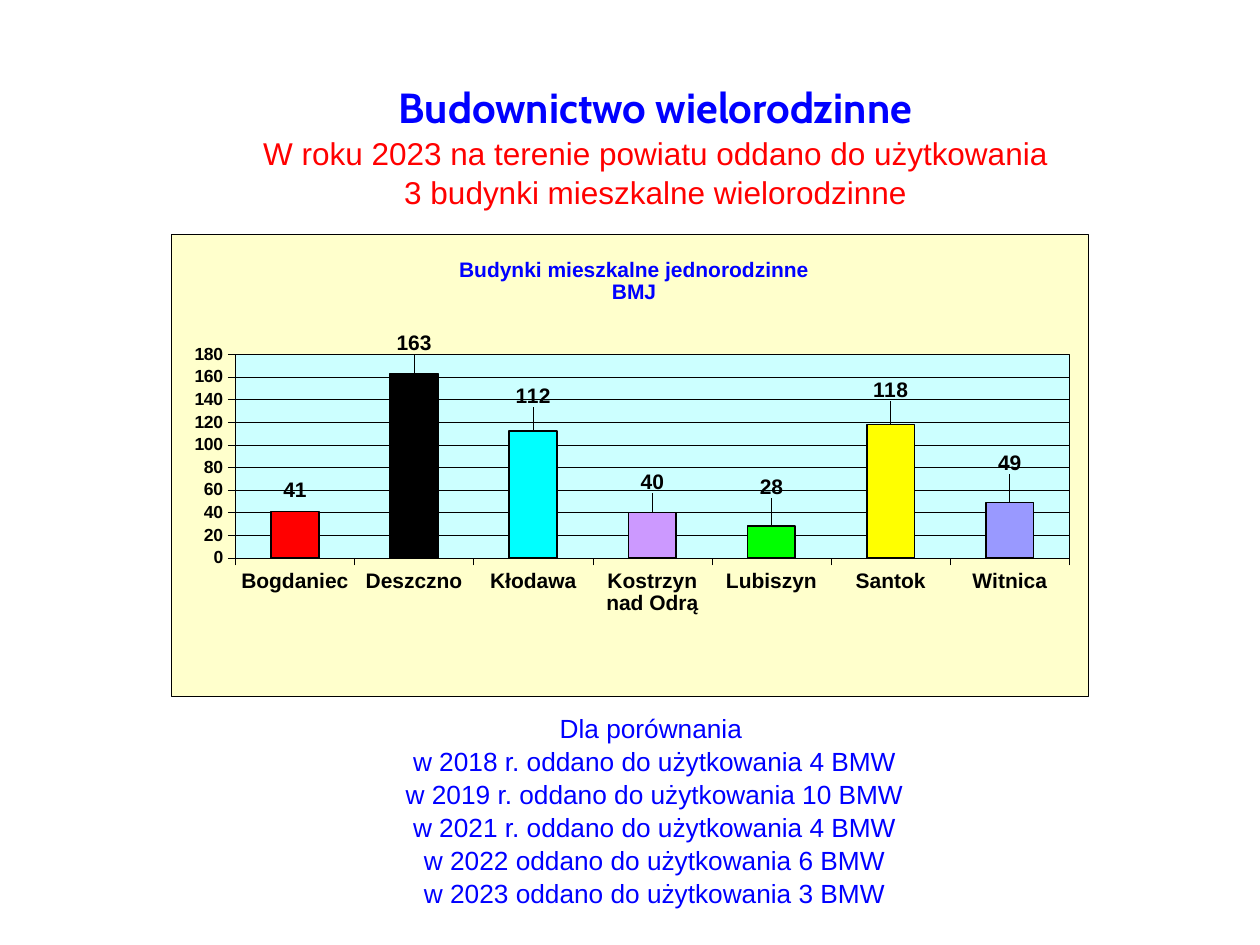
"""Build the slide on multi-family housing with its chart by commune."""
from pptx import Presentation, util as u
from pptx.chart.data import CategoryChartData
from pptx.dml.color import RGBColor
from pptx.enum import chart as kinds, text
from pptx.oxml import parse_xml
from pptx.oxml.ns import nsdecls, qn

SCALE = 914400 / 126
BLUE = RGBColor(0, 0, 255)
RED = RGBColor(255, 0, 0)
BLACK = RGBColor(0, 0, 0)
CREAM = RGBColor(255, 255, 204)
PALE = RGBColor(204, 255, 255)
CYAN = RGBColor(0, 255, 255)
LILAC = RGBColor(204, 153, 255)
GREEN = RGBColor(0, 255, 0)
GOLD = RGBColor(255, 255, 0)
MAUVE = RGBColor(153, 153, 255)

BARS = [
    ("Bogdaniec", 41, RED, -3),
    ("Deszczno", 163, BLACK, -12),
    ("Kłodawa", 112, CYAN, -19),
    ("Kostrzyn nad Odrą", 40, LILAC, -13),
    ("Lubiszyn", 28, GREEN, -21),
    ("Santok", 118, GOLD, -18),
    ("Witnica", 49, MAUVE, -23),
]
PAST = [
    "Dla porównania ",
    "w 2018 r. oddano do użytkowania 4 BMW",
    "w 2019 r. oddano do użytkowania 10 BMW",
    "w 2021 r. oddano do użytkowania 4 BMW",
    "w 2022 oddano do użytkowania 6 BMW",
    "w 2023 oddano do użytkowania 3 BMW",
]


def px(num):
    """Turn pixels into EMU."""
    return u.Emu(round(num * SCALE))


def style(font, size, color, bold=True, face="Arial"):
    """Set the look of a font."""
    font.size, font.bold, font.name = u.Pt(size), bold, face
    font.color.rgb = color


def add_run(para, words, *look):
    """Add one styled run."""
    run = para.add_run()
    run.text = words
    style(run.font, *look)


def set_box(shape, left, top, width, height, anchor):
    """Place a placeholder and return its text frame."""
    shape.left, shape.top = px(left), px(top)
    shape.width, shape.height = px(width), px(height)
    frame = shape.text_frame
    frame.word_wrap = True
    frame.auto_size = text.MSO_AUTO_SIZE.NONE
    frame.vertical_anchor = anchor
    return frame


def center(para):
    """Center a paragraph and even out its spacing."""
    para.alignment = text.PP_ALIGN.CENTER
    para.line_spacing = 1.05
    para.space_before = para.space_after = u.Pt(0)


def add_title(shape):
    """Fill the title with its heading and subtitle."""
    frame = set_box(shape, 164, 66, 983, 158, text.MSO_ANCHOR.MIDDLE)
    para = frame.paragraphs[0]
    center(para)
    add_run(para, "Budownictwo wielorodzinne", 24, BLUE, True, "Cabin")
    for line in ("W roku 2023 na terenie powiatu oddano do użytkowania",
                 "3 budynki mieszkalne wielorodzinne"):
        para.add_line_break()
        add_run(para, line, 18, RED, False)


def add_list(shape):
    """Fill the body with the figures of past years."""
    frame = set_box(shape, 94, 704, 1121, 204, text.MSO_ANCHOR.TOP)
    for num, line in enumerate(PAST):
        para = frame.add_paragraph() if num else frame.paragraphs[0]
        center(para)
        props = para._p.get_or_add_pPr()
        props.set("marL", "0")
        props.set("indent", "0")
        props.append(parse_xml(f"<a:buNone {nsdecls('a')}/>"))
        add_run(para, line, 15, BLUE, False)


def place(node, index, inner="", **spots):
    """Give a chart part a manual layout."""
    for old in node.findall(qn("c:layout")):
        node.remove(old)
    rows = "".join(f'<c:{key} val="{val}"/>' for key, val in spots.items())
    node.insert(index, parse_xml(
        f"<c:layout {nsdecls('c')}><c:manualLayout>{inner}{rows}"
        "</c:manualLayout></c:layout>"))


def panel(fill):
    """Return a filled area with a thin black border."""
    return parse_xml(
        f"<c:spPr {nsdecls('c', 'a')}>"
        f'<a:solidFill><a:srgbClr val="{fill}"/></a:solidFill>'
        f'<a:ln w="3175"><a:solidFill><a:srgbClr val="{BLACK}"/></a:solidFill></a:ln>'
        "</c:spPr>")


def stroke(line, width):
    """Draw a line in black."""
    line.color.rgb = BLACK
    line.width = u.Pt(width)


def set_head(chart):
    """Write the chart title."""
    frame = chart.chart_title.text_frame
    add_run(frame.paragraphs[0], "Budynki mieszkalne jednorodzinne", 12, BLUE)
    add_run(frame.add_paragraph(), "BMJ", 12, BLUE)
    modes = '<c:xMode val="edge"/><c:yMode val="edge"/>'
    place(chart.chart_title._element, 1, modes, x=0.31, y=0.04)


def set_axes(chart):
    """Style both axes and the grid."""
    for axis, size in ((chart.category_axis, 12), (chart.value_axis, 10)):
        axis.major_tick_mark = kinds.XL_TICK_MARK.OUTSIDE
        axis.minor_tick_mark = kinds.XL_TICK_MARK.NONE
        stroke(axis.format.line, 0.25)
        style(axis.tick_labels.font, size, BLACK)
    axis = chart.value_axis
    axis.minimum_scale, axis.maximum_scale, axis.major_unit = 0, 180, 20
    axis.has_major_gridlines = True
    stroke(axis.major_gridlines.format.line, 0.25)


def set_bars(plot, height):
    """Color the bars and lift their labels."""
    plot.gap_width = 150
    plot.vary_by_categories = False
    series = plot.series[0]
    series.format.fill.solid()
    series.format.fill.fore_color.rgb = MAUVE
    stroke(series.format.line, 1)
    for num, (_, _, color, lift) in enumerate(BARS):
        point = series.points[num]
        point.format.fill.solid()
        point.format.fill.fore_color.rgb = color
        stroke(point.format.line, 1)
        label = point.data_label
        style(label.font, 12, BLACK)
        label.position = kinds.XL_LABEL_POSITION.OUTSIDE_END
    for node, bar in zip(series._element.iter(qn("c:dLbl")), BARS):
        place(node, 1, x=0, y=round(bar[3] / height, 2))


def add_graph(slide):
    """Add the column chart."""
    data = CategoryChartData()
    data.categories = [bar[0] for bar in BARS]
    data.add_series("Series 1", [bar[1] for bar in BARS])
    height = 463
    chart = slide.shapes.add_chart(
        kinds.XL_CHART_TYPE.COLUMN_CLUSTERED,
        px(171), px(234), px(917), px(height), data).chart
    style(chart.font, 10, BLACK)
    chart.has_legend = False
    set_head(chart)
    set_axes(chart)
    set_bars(chart.plots[0], height)
    root = chart._chartSpace.find(qn("c:chart"))
    root.addnext(panel(CREAM))
    area = root.find(qn("c:plotArea"))
    area.append(panel(PALE))
    modes = ('<c:layoutTarget val="inner"/>'
             '<c:xMode val="edge"/><c:yMode val="edge"/>')
    place(area, 0, modes, x=0.07, y=0.26, w=0.91, h=0.44)


def main():
    """Build and save the slide."""
    deck = Presentation()
    deck.slide_width, deck.slide_height = px(1260), px(945)
    slide = deck.slides.add_slide(deck.slide_layouts[1])
    add_title(slide.shapes.title)
    add_list(slide.placeholders[1])
    add_graph(slide)
    deck.save("out.pptx")


if __name__ == "__main__":
    main()
